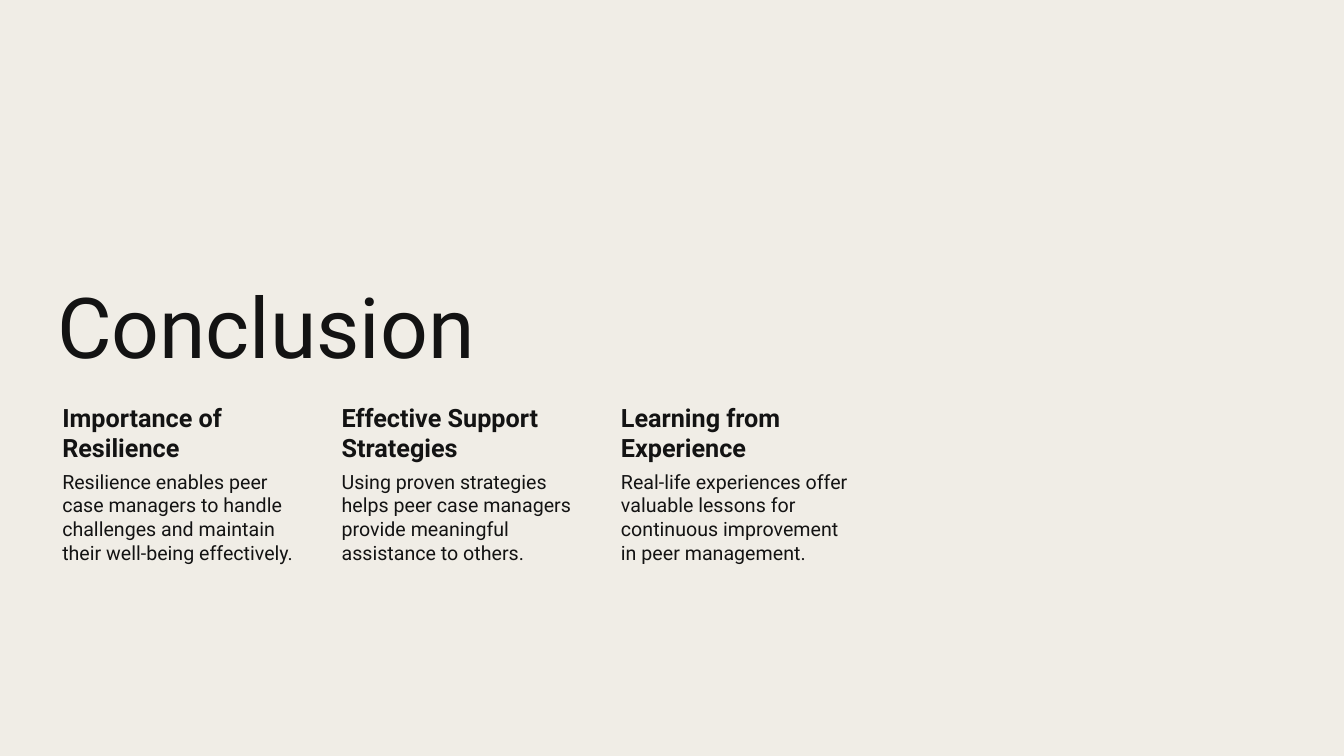
from pptx import Presentation
from pptx.dml.color import RGBColor as Rgb
from pptx.enum.text import MSO_ANCHOR as Anchor, MSO_AUTO_SIZE as Auto, PP_ALIGN as Align
from pptx.util import Cm, Pt

HUES = {"paper": "F0EDE6", "ink": "131313"}


def write(shape, text, size, bold=False, anchor=Anchor.TOP, left=0.38, pad=0.08, line=1.0):
    frame = shape.text_frame
    frame.word_wrap = True
    frame.auto_size = Auto.NONE
    frame.vertical_anchor = anchor
    frame.margin_left = Cm(left)
    frame.margin_top = frame.margin_right = frame.margin_bottom = Cm(pad)
    para = frame.paragraphs[0]
    para.alignment = Align.LEFT
    para.line_spacing = line
    run = para.add_run()
    run.text = text
    run.font.name = "Roboto"
    run.font.size = Pt(size)
    run.font.bold = bold
    run.font.color.rgb = Rgb.from_string(HUES["ink"])


deck = Presentation()
deck.slide_width = Cm(33.87)
deck.slide_height = Cm(19.05)
slide = deck.slides.add_slide(deck.slide_layouts[5])
fill = slide.background.fill
fill.solid()
fill.fore_color.rgb = Rgb.from_string(HUES["paper"])

title = slide.shapes.title
title.left, title.top, title.width, title.height = Cm(1.19), Cm(4.52), Cm(20.47), Cm(5.11)
write(title, "Conclusion", 60, anchor=Anchor.BOTTOM, left=0.25, pad=0.13, line=0.9)

points = [
    ("Importance of Resilience",
     "Resilience enables peer case managers to handle challenges and maintain their well-being effectively."),
    ("Effective Support Strategies",
     "Using proven strategies helps peer case managers provide meaningful assistance to others."),
    ("Learning from Experience",
     "Real-life experiences offer valuable lessons for continuous improvement in peer management."),
]
for col, (head, body) in enumerate(points):
    x = Cm(1.19 + col * 7.04)
    box = slide.shapes.add_textbox(x, Cm(10.06), Cm(6.4), Cm(1.73))
    write(box, head, 18, bold=True)
    box = slide.shapes.add_textbox(x, Cm(11.79), Cm(6.4), Cm(4.47))
    write(box, body, 14, pad=0.05)

deck.save("out.pptx")
